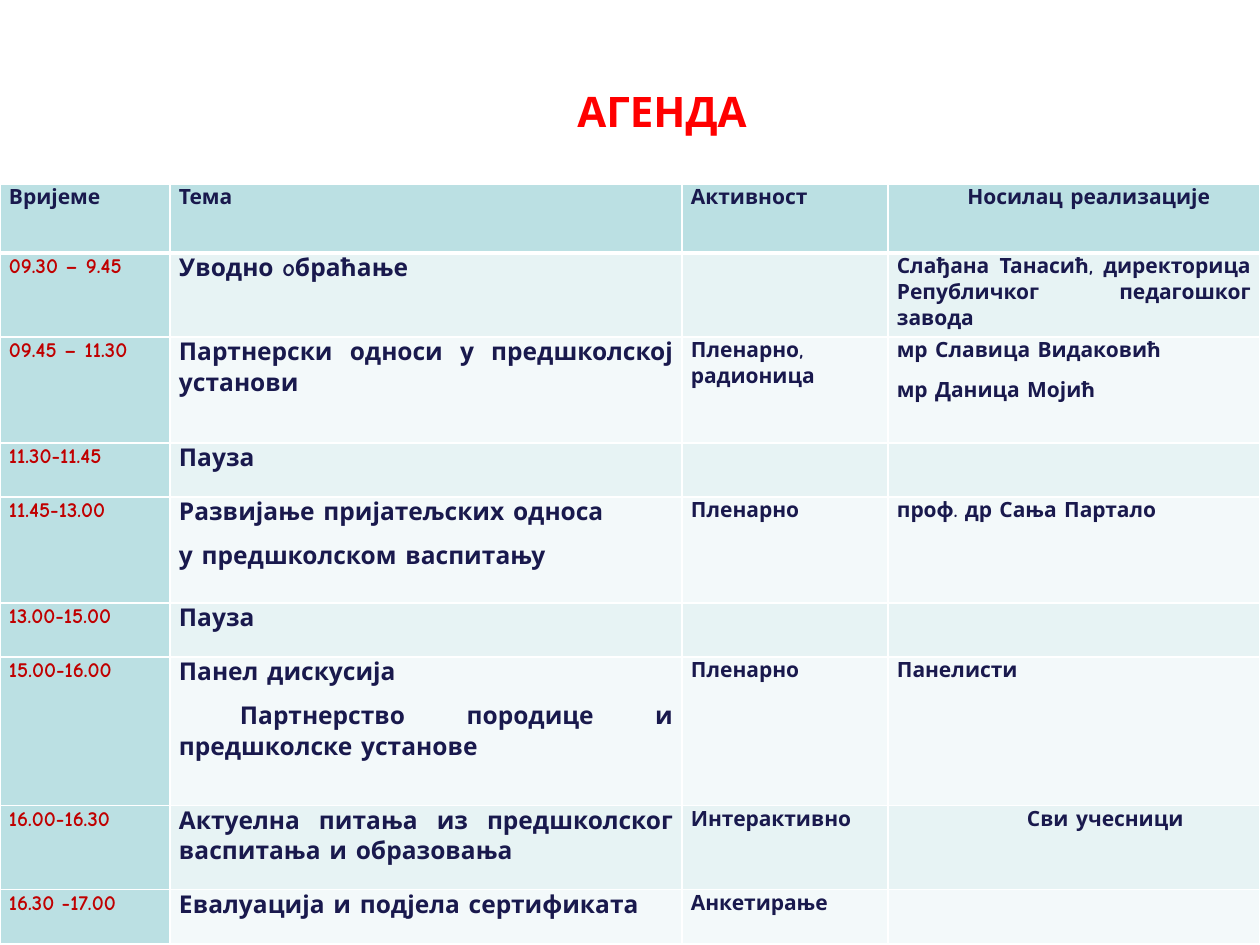
import pptx
import pptx.util
import pptx.dml.color
import pptx.enum.text
import pptx.oxml
import pptx.oxml.ns
import lxml.etree

PX = 914400 / 126
FONT = "Comic Neue"
HUES = {"title": "FF0000", "text": "19194D", "time": "C00000", "head": "BBE0E3",
        "odd": "E7F3F4", "even": "F3F9FA", "line": "FFFFFF"}
ALIGN = pptx.enum.text.PP_ALIGN


def emu(px):
    return pptx.util.Emu(int(px * PX))


def style(par, size, hue, align):
    par.alignment = align
    par.font.name = FONT
    par.font.size = pptx.util.Pt(size)
    par.font.bold = True
    par.font.color.rgb = pptx.dml.color.RGBColor.from_string(HUES[hue])


deck = pptx.Presentation()
deck.slide_width, deck.slide_height = emu(1260), emu(945)
slide = deck.slides.add_slide(deck.slide_layouts[6])

title = slide.shapes.add_textbox(emu(273), emu(37), emu(778), emu(147)).text_frame
title.word_wrap = True
title.vertical_anchor = pptx.enum.text.MSO_ANCHOR.MIDDLE
title.text = "АГЕНДА"
style(title.paragraphs[0], 24, "title", ALIGN.CENTER)

rows = [
    ("Вријеме", "Тема", "Активност", "\tНосилац реализације"),
    ("09.30 – 9.45", "Уводно oбраћање", "",
     "Слађана Танасић, директорица Републичког педагошког завода"),
    ("09.45 – 11.30", "Партнерски односи у предшколској установи",
     "Пленарно, радионица", "мр Славица Видаковић\nмр Даница Мојић"),
    ("11.30-11.45", "Пауза", "", ""),
    ("11.45-13.00", "Развијање пријатељских односа\nу предшколском васпитању",
     "Пленарно", "проф. др Сања Партало"),
    ("13.00-15.00", "Пауза", "", ""),
    ("15.00-16.00", "Панел дискусија\nПартнерство породице и предшколске установе",
     "Пленарно", "Панелисти"),
    ("16.00-16.30", "Актуелна питања из предшколског васпитања и образовања",
     "Интерактивно", "\tСви учесници"),
    ("16.30 -17.00", "Евалуација и подјела сертификата", "Анкетирање", ""),
]
wide = [170, 512, 206, 372]
tall = [69, 84, 106, 54, 106, 54, 149, 84, 54]
tabs = {(0, 3): (192, "ctr"), (7, 3): (130, "l")}
dents = {(6, 1, 1): 61}

grid = slide.shapes.add_table(len(rows), len(wide), 0, emu(184), emu(sum(wide)), emu(sum(tall))).table
grid.horz_banding = False
for col, px in zip(grid.columns, wide):
    col.width = emu(px)
for row, px in zip(grid.rows, tall):
    row.height = emu(px)

for r, words in enumerate(rows):
    for c, word in enumerate(words):
        cell = grid.cell(r, c)
        cell.margin_left = cell.margin_right = emu(9)
        cell.margin_top = cell.margin_bottom = 0
        for side in "LRTB":
            thick = 3 if (r, side) in ((0, "B"), (1, "T")) else 1
            cell._tc.get_or_add_tcPr().append(pptx.oxml.parse_xml(
                f'<a:ln{side} {pptx.oxml.ns.nsdecls("a")} w="{thick * 12700}"><a:solidFill>'
                f'<a:srgbClr val="{HUES["line"]}"/></a:solidFill></a:ln{side}>'))
        band = "head" if r == 0 or c == 0 else "odd" if r % 2 else "even"
        cell.fill.solid()
        cell.fill.fore_color.rgb = pptx.dml.color.RGBColor.from_string(HUES[band])
        cell.text = word
        for p, par in enumerate(cell.text_frame.paragraphs):
            par.line_spacing = 1.07
            par.space_after = pptx.util.Pt(8)
            props = par._p.get_or_add_pPr()
            if (r, c) in tabs:
                px, kind = tabs[r, c]
                stops = lxml.etree.SubElement(props, pptx.oxml.ns.qn("a:tabLst"))
                lxml.etree.SubElement(stops, pptx.oxml.ns.qn("a:tab"), pos=str(emu(px)), algn=kind)
            if (r, c, p) in dents:
                props.set("indent", str(emu(dents[r, c, p])))
            style(par, 14 if r and c == 1 else 12, "time" if r and c == 0 else "text", ALIGN.JUSTIFY)

deck.save("out.pptx")
